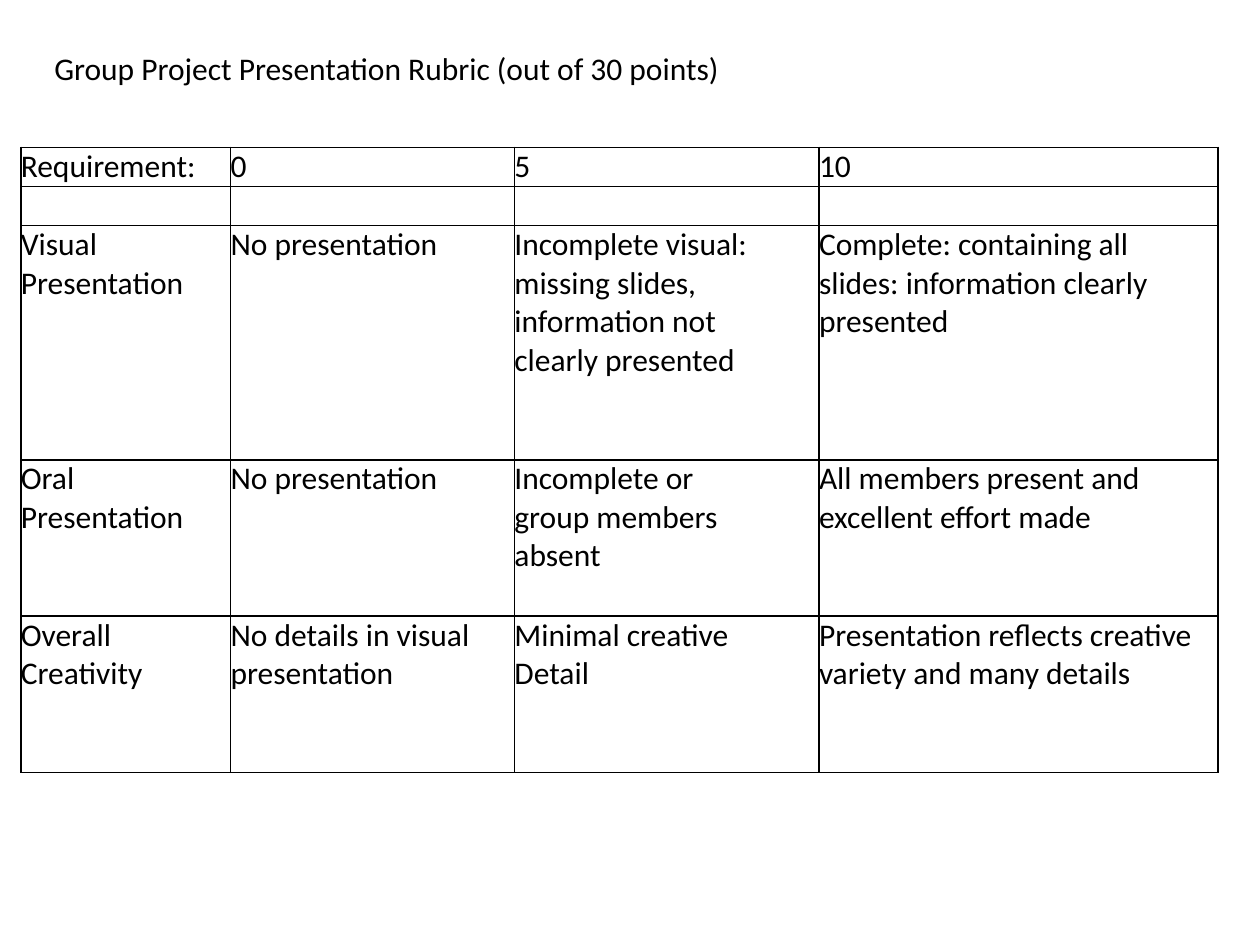
import pptx
import pptx.dml.color
import pptx.enum.text
import pptx.oxml
import pptx.oxml.ns
import pptx.util

Cm = pptx.util.Cm
BLACK = "000000"
TITLE = "Group Project Presentation Rubric (out of 30 points)"
COLUMN_WIDTHS = (4.23, 5.72, 6.14, 8.04)
ROW_HEIGHTS = (0.79, 0.79, 4.72, 3.15, 3.15)
RUBRIC = (
    ("Requirement:", "0", "5", "10"),
    ("", "", "", ""),
    ("Visual\nPresentation", "No presentation",
     "Incomplete visual: missing slides, information not\nclearly presented",
     "Complete: containing all slides: information clearly presented"),
    ("Oral\nPresentation", "No presentation",
     "Incomplete or\ngroup members\nabsent",
     "All members present and excellent effort made"),
    ("Overall\nCreativity", "No details in visual presentation",
     "Minimal creative\nDetail",
     "Presentation reflects creative variety and many details"),
)


def color(value):
    """Return the colour for a hex string."""
    return pptx.dml.color.RGBColor.from_string(value)


def set_values(target, values):
    """Set each named attribute of the target."""
    for name, value in values.items():
        setattr(target, name, value)


def write_text(frame, text):
    """Write left-aligned 18 pt text, one paragraph per line."""
    frame.text = text
    for para in frame.paragraphs:
        para.alignment = pptx.enum.text.PP_ALIGN.LEFT
        for span in para.runs:
            set_values(span.font, {"name": "Calibri", "size": pptx.util.Pt(18)})
            span.font.color.rgb = color(BLACK)


def add_borders(cell):
    """Draw a 1 pt line on all four sides of a cell."""
    properties = cell._tc.get_or_add_tcPr()
    for index, side in enumerate(("lnL", "lnR", "lnT", "lnB")):
        line = pptx.oxml.parse_xml(
            f'<a:{side} {pptx.oxml.ns.nsdecls("a")} w="{pptx.util.Pt(1)}">'
            f'<a:solidFill><a:srgbClr val="{BLACK}"/></a:solidFill></a:{side}>')
        properties.insert(index, line)


def format_title(title):
    """Place and fill the title placeholder."""
    set_values(title, {"left": Cm(0.84), "top": Cm(0.84),
                       "width": Cm(23.06), "height": Cm(1.07)})
    set_values(title.text_frame, {
        "word_wrap": True,
        "auto_size": pptx.enum.text.MSO_AUTO_SIZE.NONE,
        "vertical_anchor": pptx.enum.text.MSO_ANCHOR.MIDDLE})
    write_text(title.text_frame, TITLE)


def add_rubric(page):
    """Add the rubric as a plain ruled table."""
    table = page.shapes.add_table(
        len(ROW_HEIGHTS), len(COLUMN_WIDTHS), Cm(0.42), Cm(2.97),
        Cm(sum(COLUMN_WIDTHS)), Cm(sum(ROW_HEIGHTS))).table
    set_values(table, {"first_row": False, "horz_banding": False})
    for column, width in zip(table.columns, COLUMN_WIDTHS):
        column.width = Cm(width)
    for row, height, texts in zip(table.rows, ROW_HEIGHTS, RUBRIC):
        row.height = Cm(height)
        for cell, text in zip(row.cells, texts):
            set_values(cell, {"margin_left": 0, "margin_right": 0,
                              "margin_top": 0, "margin_bottom": 0})
            cell.fill.background()
            add_borders(cell)
            write_text(cell.text_frame, text)
        row.cells[len(texts) - 1].margin_right = Cm(0.25)


def main():
    """Build the slide and save it."""
    deck = pptx.Presentation()
    set_values(deck, {"slide_width": Cm(25.4), "slide_height": Cm(19.05)})
    page = deck.slides.add_slide(deck.slide_layouts.get_by_name("Title Only"))
    format_title(page.shapes.title)
    add_rubric(page)
    deck.save("out.pptx")


if __name__ == "__main__":
    main()
